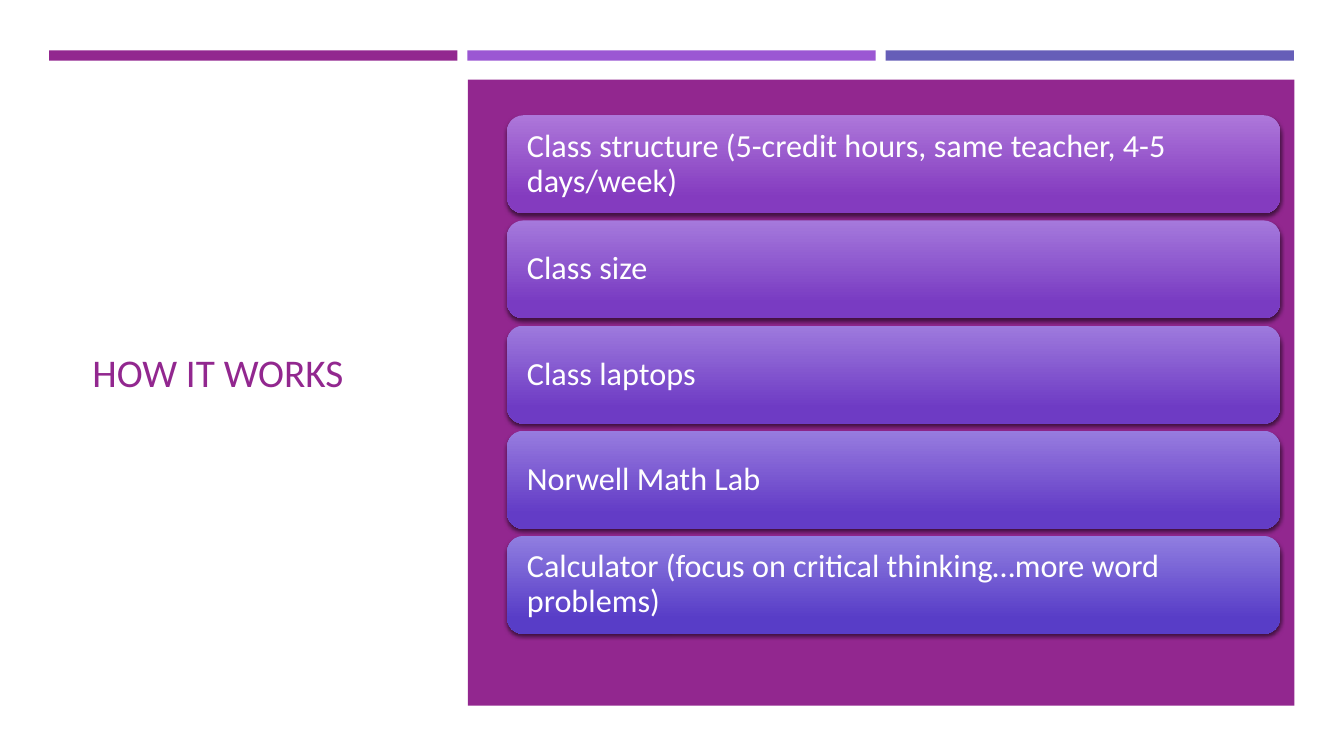
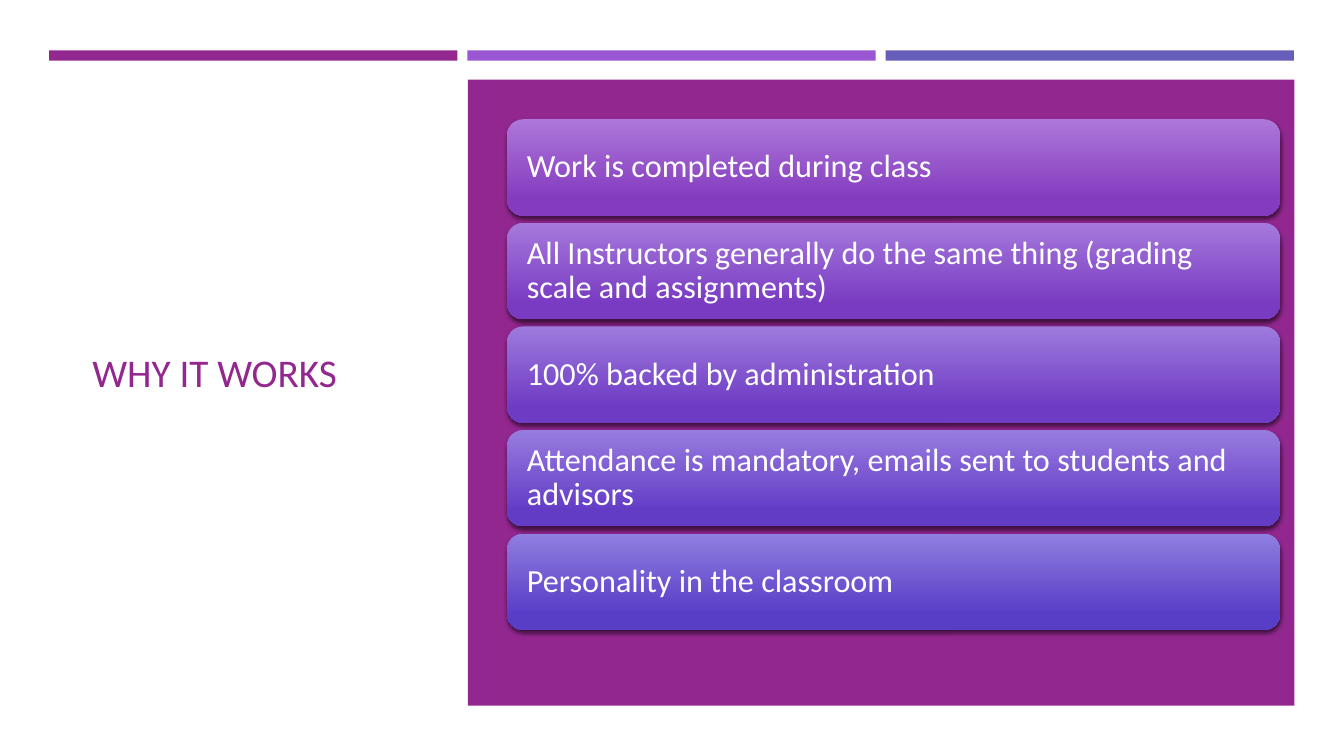
from lxml import etree
from pptx import Presentation
from pptx import util as u
from pptx.dml.color import RGBColor
from pptx.enum import shapes, text
from pptx.oxml.ns import qn

COLORS = {
    "plum": "92278F",
    "violet": "9B57D3",
    "indigo": "665EB8",
    "white": "FFFFFF",
    "black": "000000",
}
CARD_GRADIENTS = [
    ("AD77DA", "843BBF"),
    ("A579DC", "793BC2"),
    ("9E7ADD", "6E3BC4"),
    ("977CDF", "633CC6"),
    ("907EE0", "583DC7"),
]
FONT = "Calibri"
BANDS_BOX = (1.24, 1.27, 31.37, 0.26)
TITLE_BOX = (2.08, 2.9, 8.48, 13.08)
PANEL_BOX = (11.79, 2.01, 20.83, 15.77)
STACK_BOX = (12.78, 2.9, 19.48, 13.08)
BAND_GAP = 0.25
CARD_GAP = 0.18

TOPICS = [
    ("HOW IT WORKS", 2.47, [
        "Class structure (5-credit hours, same teacher, 4-5 days/week)",
        "Class size",
        "Class laptops",
        "Norwell Math Lab",
        "Calculator (focus on critical thinking…more word problems)",
    ]),
    ("WHY IT WORKS", 2.43, [
        "Work is completed during class",
        "All Instructors generally do the same thing (grading scale and assignments)",
        "100% backed by administration",
        "Attendance is mandatory, emails sent to students and advisors",
        "Personality in the classroom",
    ]),
]


def place(box):
    return [u.Cm(length) for length in box]


def add_block(slide, box, kind=shapes.MSO_SHAPE.RECTANGLE):
    block = slide.shapes.add_shape(kind, *place(box))
    block.shadow.inherit = False
    block.line.fill.background()
    return block


def add_filled_block(slide, box, color):
    block = add_block(slide, box)
    block.fill.solid()
    block.fill.fore_color.rgb = RGBColor.from_string(COLORS[color])


def write(frame, words, size, color):
    frame.word_wrap = True
    frame.vertical_anchor = text.MSO_ANCHOR.MIDDLE
    line = frame.paragraphs[0]
    line.text = words
    line.alignment = text.PP_ALIGN.LEFT
    line.line_spacing = 0.9
    line.font.name = FONT
    line.font.size = u.Pt(size)
    line.font.color.rgb = RGBColor.from_string(COLORS[color])


def cast_shadow(block):
    effects = block._element.spPr.find(qn("a:effectLst"))
    shadow = etree.SubElement(
        effects, qn("a:outerShdw"), blurRad=str(u.Pt(3)), dist=str(u.Pt(2)),
        dir="5400000", algn="ctr", rotWithShape="0")
    tone = etree.SubElement(shadow, qn("a:srgbClr"), val=COLORS["black"])
    etree.SubElement(tone, qn("a:alpha"), val="55000")


def add_bands(slide, box):
    left, top, width, height = box
    colors = ("plum", "violet", "indigo")
    band_width = (width - BAND_GAP * (len(colors) - 1)) / len(colors)
    for index, color in enumerate(colors):
        band_left = left + index * (band_width + BAND_GAP)
        add_filled_block(slide, (band_left, top, band_width, height), color)


def add_title(slide, box, title):
    heading = slide.shapes.add_textbox(*place(box))
    write(heading.text_frame, title, 28, "plum")


def add_card(slide, box, words, gradient):
    card = add_block(slide, box, shapes.MSO_SHAPE.ROUNDED_RECTANGLE)
    card.fill.gradient()
    card.fill.gradient_angle = 270
    for stop, position, color in zip(card.fill.gradient_stops, (0, 0.84), gradient):
        stop.position = position
        stop.color.rgb = RGBColor.from_string(color)
    cast_shadow(card)
    frame = card.text_frame
    frame.margin_left = frame.margin_right = u.Cm(0.38)
    write(frame, words, 23, "white")


def add_card_stack(slide, box, points, card_height):
    left, top, width, height = box
    pitch = card_height + CARD_GAP
    first_top = top + (height - pitch * len(points) + CARD_GAP) / 2
    for index, (words, gradient) in enumerate(zip(points, CARD_GRADIENTS)):
        card_box = (left, first_top + index * pitch, width, card_height)
        add_card(slide, card_box, words, gradient)


def add_topic_slide(deck, title, card_height, points):
    slide = deck.slides.add_slide(deck.slide_layouts[6])
    add_title(slide, TITLE_BOX, title)
    add_bands(slide, BANDS_BOX)
    add_filled_block(slide, PANEL_BOX, "plum")
    add_card_stack(slide, STACK_BOX, points, card_height)


def main():
    deck = Presentation()
    deck.slide_width = u.Cm(33.87)
    deck.slide_height = u.Cm(19.05)
    for title, card_height, points in TOPICS:
        add_topic_slide(deck, title, card_height, points)
    deck.save("out.pptx")


if __name__ == "__main__":
    main()
